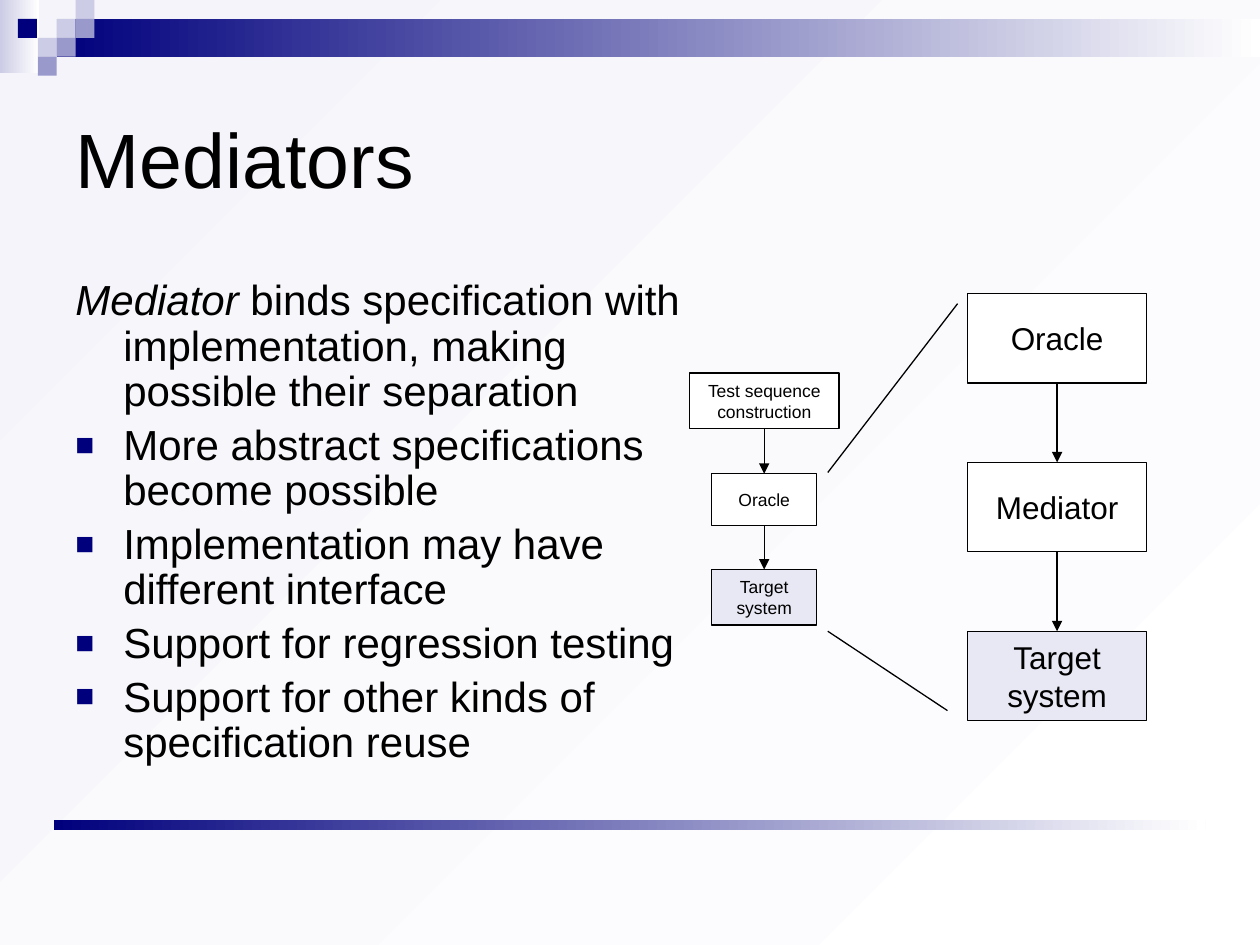
from dataclasses import dataclass

import pptx
import pptx.dml.color
import pptx.enum.shapes
import pptx.enum.text
import pptx.oxml
import pptx.oxml.ns
import pptx.util
from pptx.util import Inches


@dataclass(frozen=True)
class Theme:
    """Colours, font and type sizes of the slide."""
    navy: str = "00007D"
    lilac: str = "9999CC"
    pale: str = "CCCCE6"
    mist: str = "F4F4FA"
    target: str = "E8E8F4"
    white: str = "FFFFFF"
    black: str = "000000"
    font: str = "Arial"
    title: int = 44
    body: int = 24
    large: int = 18
    small: int = 10
    rule: float = 0.75


THEME = Theme()


def rgb(value):
    """Turn a hex string into a colour."""
    return pptx.dml.color.RGBColor.from_string(value)


def fade(fill, start, angle=0):
    """Fill with a gradient from a colour to white."""
    fill.gradient()
    fill.gradient_angle = angle
    for stop, colour in zip(fill.gradient_stops, (start, THEME.white)):
        stop.color.rgb = rgb(colour)


def style_text(paragraph, size):
    """Give the runs of a paragraph the theme font."""
    for run in paragraph.runs:
        run.font.name = THEME.font
        run.font.size = pptx.util.Pt(size)
        run.font.color.rgb = rgb(THEME.black)


def add_block(slide, left, top, width, height):
    """Add a rectangle without shadow or outline."""
    block = slide.shapes.add_shape(
        pptx.enum.shapes.MSO_SHAPE.RECTANGLE,
        Inches(left), Inches(top), Inches(width), Inches(height))
    block.shadow.inherit = False
    block.line.fill.background()
    return block


def add_line(slide, start=(0, 0), end=(0, 0), joined=None):
    """Draw a plain line, or an arrow down between two joined boxes."""
    line = slide.shapes.add_connector(
        pptx.enum.shapes.MSO_CONNECTOR.STRAIGHT,
        *(Inches(value) for value in (*start, *end)))
    line.line.color.rgb = rgb(THEME.black)
    line.line.width = pptx.util.Pt(THEME.rule)
    properties = line._element.spPr
    if joined:
        line.begin_connect(joined[0], 2)
        line.end_connect(joined[1], 0)
        outline = properties.find(pptx.oxml.ns.qn("a:ln"))
        outline.append(pptx.oxml.parse_xml(
            f'<a:tailEnd {pptx.oxml.ns.nsdecls("a")} type="triangle"/>'))
    properties.append(pptx.oxml.parse_xml(
        f'<a:effectLst {pptx.oxml.ns.nsdecls("a")}/>'))


def add_header(slide, left, top, width):
    """Draw the header band with its mosaic of squares."""
    side = 0.15
    corner = add_block(slide, left, top, 0.31, 0.58)
    fade(corner.fill, THEME.pale)
    band = add_block(slide, left + 3 * side, top + side, width - 3 * side, 2 * side)
    fade(band.fill, THEME.navy)
    mosaic = [(3, 1, THEME.pale), (4, 0, THEME.pale), (4, 1, THEME.lilac),
              (2, 2, THEME.pale), (0.95, 1, THEME.navy), (3, 2, THEME.lilac),
              (2, 3, THEME.lilac)]
    for column, row, colour in mosaic:
        square = add_block(slide, left + column * side, top + row * side, side, side)
        square.fill.solid()
        square.fill.fore_color.rgb = rgb(colour)


def add_title(slide, left, top, width, height):
    """Place and format the title."""
    title = slide.shapes.title
    title.left, title.top = Inches(left), Inches(top)
    title.width, title.height = Inches(width), Inches(height)
    title.text_frame.text = "Mediators"
    title.text_frame.vertical_anchor = pptx.enum.text.MSO_ANCHOR.MIDDLE
    heading = title.text_frame.paragraphs[0]
    heading.alignment = pptx.enum.text.PP_ALIGN.LEFT
    style_text(heading, THEME.title)


def add_bullet(paragraph):
    """Put a navy square in front of a paragraph."""
    for tag, content in (
            ("buClr", f'><a:srgbClr val="{THEME.navy}"/></a:buClr>'),
            ("buSzPct", ' val="75000"/>'),
            ("buFont", f' typeface="{THEME.font}"/>'),
            ("buChar", ' char="■"/>')):
        paragraph._p.get_or_add_pPr().append(pptx.oxml.parse_xml(
            f'<a:{tag} {pptx.oxml.ns.nsdecls("a")}{content}'))


def add_benefits(slide, left, top, width, height):
    """Write the definition and the list of benefits."""
    benefits = slide.shapes.add_textbox(
        Inches(left), Inches(top), Inches(width), Inches(height)).text_frame
    benefits.word_wrap = True
    benefits.text = "\n".join([
        "",
        "More abstract specifications become possible",
        "Implementation may have different interface",
        "Support for regression testing",
        "Support for other kinds of specification reuse"])
    definition = benefits.paragraphs[0]
    term = definition.add_run()
    term.text = "Mediator"
    term.font.italic = True
    definition.add_run().text = (
        " binds specification with implementation, making possible their separation")
    for index, paragraph in enumerate(benefits.paragraphs):
        paragraph.line_spacing = 0.9
        paragraph.space_before = pptx.util.Pt(4.8)
        indent = paragraph._p.get_or_add_pPr()
        indent.set("marL", str(Inches(0.38)))
        indent.set("indent", str(Inches(-0.38)))
        if index:
            add_bullet(paragraph)
        style_text(paragraph, THEME.body)


def add_flow(slide, left, top, width, stages, size):
    """Stack centred stages, the last one tinted, and join them with arrows."""
    boxes = []
    for label, offset, box_width, box_height in stages:
        box = add_block(slide, left + (width - box_width) / 2, top + offset,
                        box_width, box_height)
        box.fill.solid()
        box.fill.fore_color.rgb = rgb(
            THEME.target if label == "Target system" else THEME.white)
        box.line.color.rgb = rgb(THEME.black)
        box.line.width = pptx.util.Pt(THEME.rule)
        box.text_frame.word_wrap = True
        box.text_frame.vertical_anchor = pptx.enum.text.MSO_ANCHOR.MIDDLE
        box.text_frame.text = label
        caption = box.text_frame.paragraphs[0]
        caption.alignment = pptx.enum.text.PP_ALIGN.CENTER
        style_text(caption, size)
        boxes.append(box)
    for pair in zip(boxes, boxes[1:]):
        add_line(slide, joined=pair)


def add_diagram(slide, left, top):
    """Draw the test flow and its enlarged part with the mediator."""
    labels = ["Oracle", "Mediator", "Target system"]
    detail = [(label, 1.34 * row, 1.42, 0.71) for row, label in enumerate(labels)]
    add_flow(slide, left + 2.21, top, 1.42, detail, THEME.large)
    overview = [("Test sequence construction", 0, 1.19, 0.44),
                ("Oracle", 0.8, 0.83, 0.41),
                ("Target system", 1.56, 0.83, 0.44)]
    add_flow(slide, left, top + 0.63, 1.19, overview, THEME.small)
    add_line(slide, (left + 1.1, top + 1.42), (left + 2.13, top + 0.08))
    add_line(slide, (left + 1.1, top + 2.68), (left + 2.05, top + 3.31))


def main():
    """Build the slide and save it."""
    deck = pptx.Presentation()
    deck.slide_width, deck.slide_height = Inches(10), Inches(7.5)
    slide = deck.slides.add_slide(deck.slide_layouts.get_by_name("Title Only"))
    fade(slide.background.fill, THEME.mist, 315)
    add_header(slide, 0, 0, 10)
    footer_rule = add_block(slide, 0.43, 6.51, 9.14, 0.08)
    fade(footer_rule.fill, THEME.navy)
    add_title(slide, 0.5, 0.5, 9, 1.5)
    add_benefits(slide, 0.5, 2.17, 5.29, 4.25)
    add_diagram(slide, 5.47, 2.33)
    deck.save("out.pptx")


if __name__ == "__main__":
    main()
